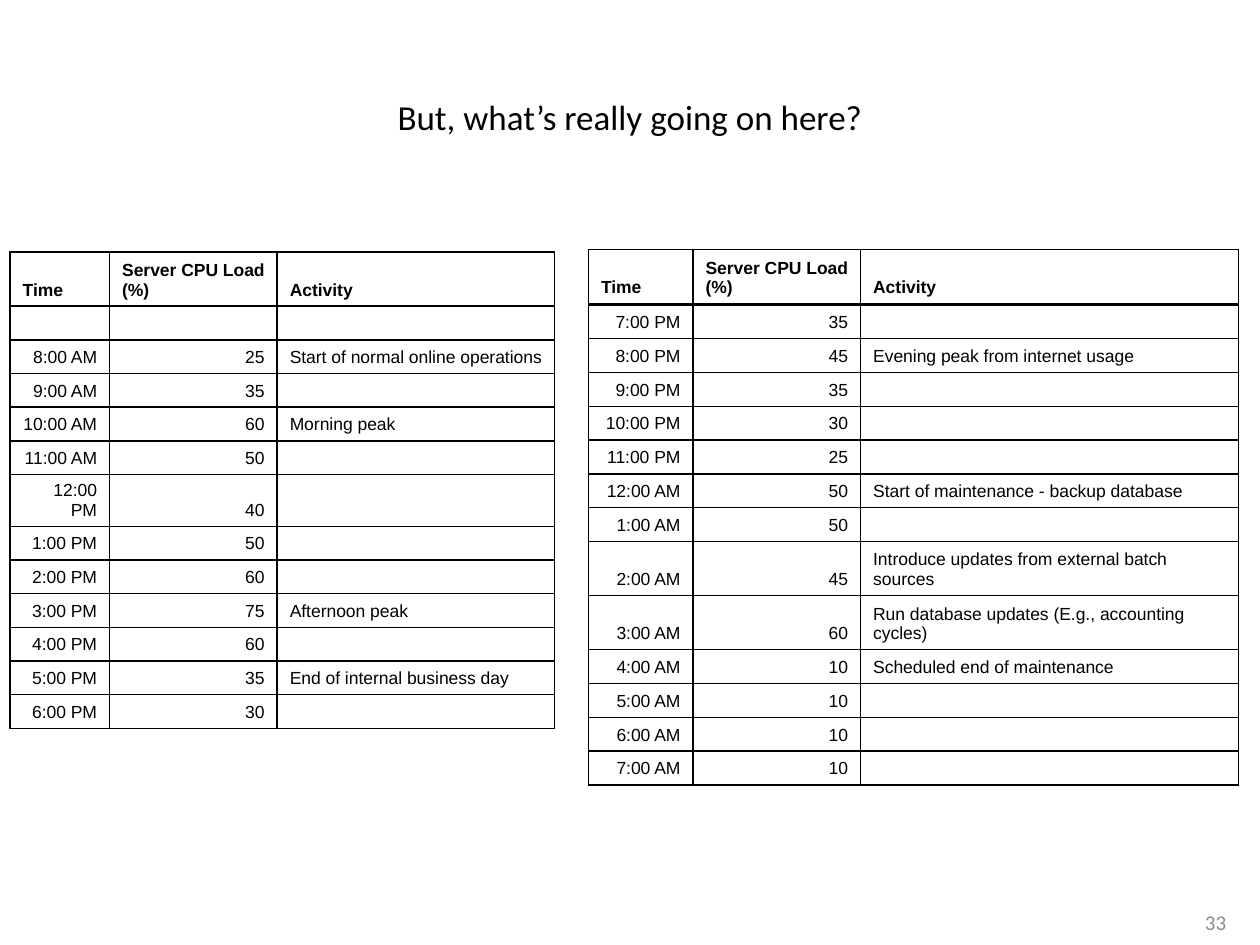
from pptx import Presentation
from pptx.dml.color import RGBColor
from pptx.enum.text import MSO_ANCHOR, PP_ALIGN
from pptx.oxml import parse_xml
from pptx.oxml.ns import nsdecls
from pptx.util import Inches, Pt

LEFT, RIGHT, CENTER = PP_ALIGN.LEFT, PP_ALIGN.RIGHT, PP_ALIGN.CENTER
MIDDLE, BOTTOM = MSO_ANCHOR.MIDDLE, MSO_ANCHOR.BOTTOM
COLORS = {"ink": "000000", "number": "8C8C8C"}
TALL = 0.43

TITLE = "But, what’s really going on here?"
PAGE = "33"
HEAD = ("Time", "Server CPU Load (%)", "Activity")
DAY = [
    ("", "", ""),
    ("8:00 AM", "25", "Start of normal online operations"),
    ("9:00 AM", "35", ""),
    ("10:00 AM", "60", "Morning peak"),
    ("11:00 AM", "50", ""),
    ("12:00 PM", "40", ""),
    ("1:00 PM", "50", ""),
    ("2:00 PM", "60", ""),
    ("3:00 PM", "75", "Afternoon peak"),
    ("4:00 PM", "60", ""),
    ("5:00 PM", "35", "End of internal business day"),
    ("6:00 PM", "30", ""),
]
NIGHT = [
    ("7:00 PM", "35", ""),
    ("8:00 PM", "45", "Evening peak from internet usage"),
    ("9:00 PM", "35", ""),
    ("10:00 PM", "30", ""),
    ("11:00 PM", "25", ""),
    ("12:00 AM", "50", "Start of maintenance - backup database"),
    ("1:00 AM", "50", ""),
    ("2:00 AM", "45", "Introduce updates from external batch sources"),
    ("3:00 AM", "60", "Run database updates (E.g., accounting cycles)"),
    ("4:00 AM", "10", "Scheduled end of maintenance"),
    ("5:00 AM", "10", ""),
    ("6:00 AM", "10", ""),
    ("7:00 AM", "10", ""),
]
DAY_COLS = (0.79, 1.33, 2.2)
NIGHT_COLS = (0.83, 1.33, 3)
# rows, left, top, height, column widths, indexes of tall rows
TABLES = [
    ([HEAD] + DAY, 0.08, 2, 3.64, DAY_COLS, {0}),
    (NIGHT, 4.67, 2.42, 3.81, NIGHT_COLS, {7, 8}),
    ([HEAD], 4.67, 1.98, TALL, NIGHT_COLS, {0}),
]


def style(par, size, face, color, align, bold=False):
    par.alignment = align
    font = par.font
    font.size, font.name, font.bold = Pt(size), face, bold
    font.color.rgb = RGBColor.from_string(COLORS[color])


def add_borders(cell):
    props = cell._tc.get_or_add_tcPr()
    for i, side in enumerate(("lnL", "lnR", "lnT", "lnB")):
        props.insert(i, parse_xml(
            f'<a:{side} {nsdecls("a")} w="{Pt(1)}"><a:solidFill>'
            f'<a:srgbClr val="{COLORS["ink"]}"/></a:solidFill></a:{side}>'))


def fill_cell(cell, text, col, head):
    cell.text = text
    cell.vertical_anchor = BOTTOM
    cell.fill.background()
    align = LEFT if head or col == 2 else RIGHT
    style(cell.text_frame.paragraphs[0], 10, "Arial", "ink", align, head)
    add_borders(cell)


def add_grid(slide, rows, left, top, height, cols, tall):
    frame = slide.shapes.add_table(
        len(rows), len(cols), Inches(left), Inches(top),
        Inches(sum(cols)), Inches(height))
    table = frame.table
    table.first_row = table.horz_banding = False
    for col, width in zip(table.columns, cols):
        col.width = Inches(width)
    low = (height - TALL * len(tall)) / max(1, len(rows) - len(tall))
    for r, row in enumerate(rows):
        table.rows[r].height = Inches(TALL if r in tall else low)
        for c, text in enumerate(row):
            fill_cell(table.cell(r, c), text, c, row is HEAD)


def main():
    deck = Presentation()
    deck.slide_width, deck.slide_height = Inches(10), Inches(7.5)
    slide = deck.slides.add_slide(deck.slide_layouts[5])

    title = slide.shapes.title
    title.left, title.top = Inches(0.5), Inches(0.3)
    title.width, title.height = Inches(9), Inches(1.25)
    title.text_frame.text = TITLE
    title.text_frame.vertical_anchor = MIDDLE
    style(title.text_frame.paragraphs[0], 20, "Calibri", "ink", CENTER)

    for grid in TABLES:
        add_grid(slide, *grid)

    page = slide.shapes.add_textbox(
        Inches(7.5), Inches(7.12), Inches(2.33), Inches(0.4)).text_frame
    page.word_wrap = True
    page.vertical_anchor = MIDDLE
    page.text = PAGE
    style(page.paragraphs[0], 12, "Calibri", "number", RIGHT)

    deck.save("out.pptx")


if __name__ == "__main__":
    main()
